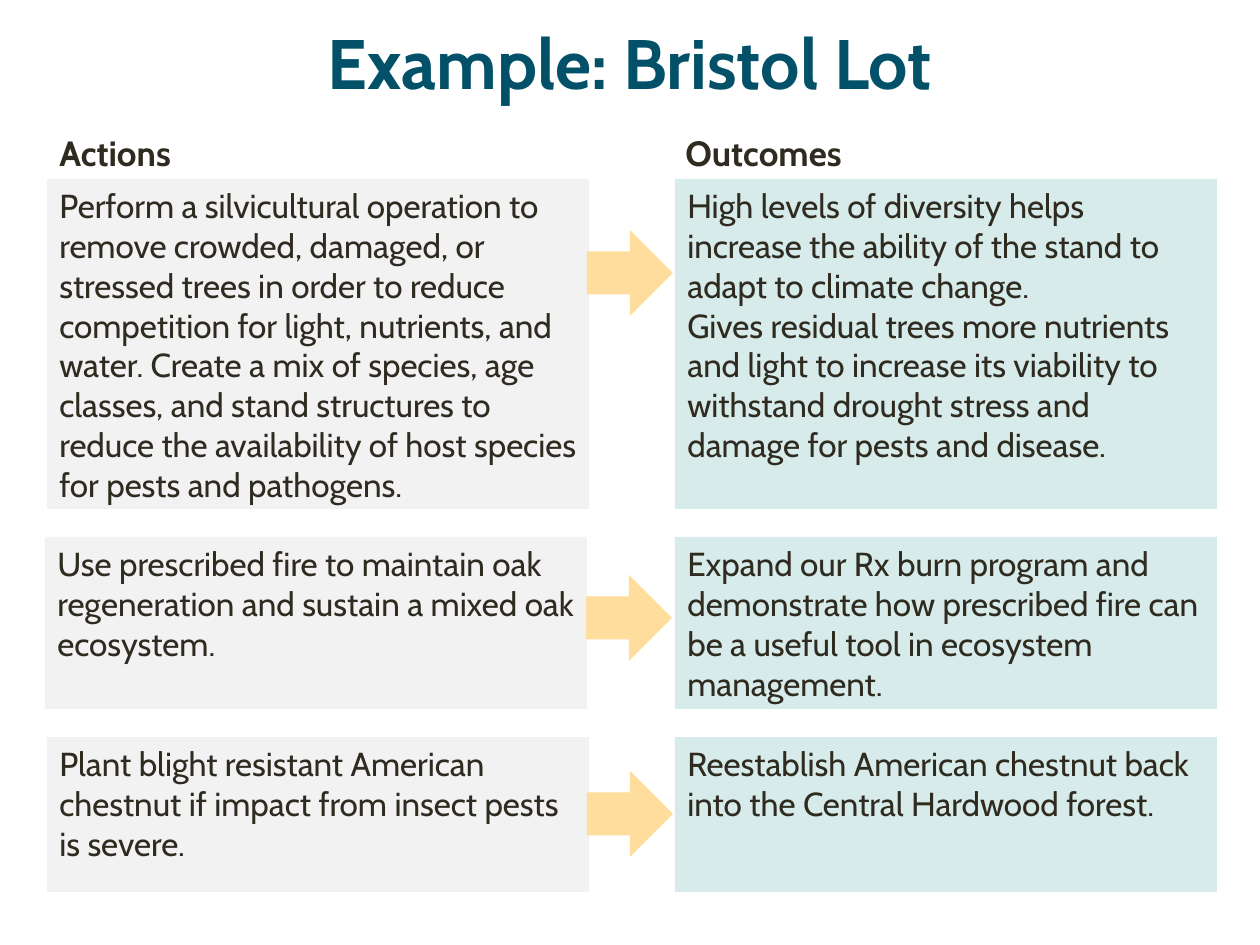
import dataclasses

import pptx
import pptx.dml.color
import pptx.enum.shapes
import pptx.enum.text
import pptx.util

RGB = pptx.dml.color.RGBColor
KIND = pptx.enum.shapes.MSO_SHAPE
ALIGN = pptx.enum.text.PP_ALIGN
ANCHOR = pptx.enum.text.MSO_ANCHOR

TEAL = RGB(0x02, 0x51, 0x68)
INK = RGB(0x2F, 0x2B, 0x20)
GREY = RGB(0xF2, 0xF2, 0xF2)
MINT = RGB(0xD7, 0xEB, 0xEA)
GOLD = RGB(0xFF, 0xDD, 0x9C)

# Lengths in px, 126 to the inch
SCALE = 914400 / 126
CARD_W = 542
RIGHT_X = 675
ARROW = 86

HEAD = {"name": "Cabin", "size": pptx.util.Pt(40), "bold": True}
LABEL = {"name": "Cabin", "size": pptx.util.Pt(20), "bold": True}
BODY = {"name": "Cabin", "size": pptx.util.Pt(19), "bold": False}


@dataclasses.dataclass
class Row:
    left: int
    top: int
    high: int
    arrow_x: int
    arrow_y: int
    action: list[str]
    outcome: list[str]


ROWS = [
    Row(47, 179, 330, 587, 230,
        ["Perform a silvicultural operation to remove crowded, damaged, or "
         "stressed trees in order to reduce competition for light, nutrients, "
         "and water. Create a mix of species, age classes, and stand "
         "structures to reduce the availability of host species for pests "
         "and pathogens."],
        ["High levels of diversity helps increase the ability of the stand "
         "to adapt to climate change.",
         "Gives residual trees more nutrients and light to increase its "
         "viability to withstand drought stress and damage for pests and "
         "disease."]),
    Row(45, 537, 172, 586, 575,
        ["Use prescribed fire to maintain oak regeneration and sustain a "
         "mixed oak ecosystem."],
        ["Expand our Rx burn program and demonstrate how prescribed fire can "
         "be a useful tool in ecosystem management."]),
    Row(47, 737, 155, 587, 771,
        ["Plant blight resistant American chestnut if impact from insect "
         "pests is severe."],
        ["Reestablish American chestnut back into the Central Hardwood "
         "forest."]),
]


def px(*sizes: int) -> list[int]:
    return [round(size * SCALE) for size in sizes]


def write(shape, lines: list[str], style: dict, color: RGB,
          align=ALIGN.LEFT, anchor=ANCHOR.TOP) -> None:
    frame = shape.text_frame
    frame.text = "\n".join(lines)
    frame.word_wrap = True
    frame.auto_size = pptx.enum.text.MSO_AUTO_SIZE.NONE
    frame.vertical_anchor = anchor
    for para in frame.paragraphs:
        para.alignment = align
        for run in para.runs:
            for key, value in style.items():
                setattr(run.font, key, value)
            run.font.color.rgb = color


def block(slide, kind, box: tuple[int, int, int, int], color: RGB):
    shape = slide.shapes.add_shape(kind, *px(*box))
    shape.shadow.inherit = False
    shape.fill.solid()
    shape.fill.fore_color.rgb = color
    shape.line.fill.background()
    return shape


def draw(slide, row: Row) -> None:
    sides = [(row.left, GREY, row.action), (RIGHT_X, MINT, row.outcome)]
    for left, color, lines in sides:
        card = block(slide, KIND.RECTANGLE,
                     (left, row.top, CARD_W, row.high), color)
        write(card, lines, BODY, INK)
    block(slide, KIND.RIGHT_ARROW,
          (row.arrow_x, row.arrow_y, ARROW, ARROW), GOLD)


def main() -> None:
    deck = pptx.Presentation()
    deck.slide_width, deck.slide_height = px(1260, 945)
    slide = deck.slides.add_slide(deck.slide_layouts[5])

    # Title
    title = slide.shapes.title
    title.left, title.top, title.width, title.height = px(0, 4, 1260, 116)
    write(title, ["Example: Bristol Lot"], HEAD, TEAL,
          ALIGN.CENTER, ANCHOR.MIDDLE)

    # Column labels
    for left, text in [(47, "Actions"), (673, "Outcomes")]:
        label = slide.shapes.add_textbox(*px(left, 125, 493, 55))
        write(label, [text], LABEL, INK)

    # Action and outcome cards
    for row in ROWS:
        draw(slide, row)

    deck.save("out.pptx")


if __name__ == "__main__":
    main()
